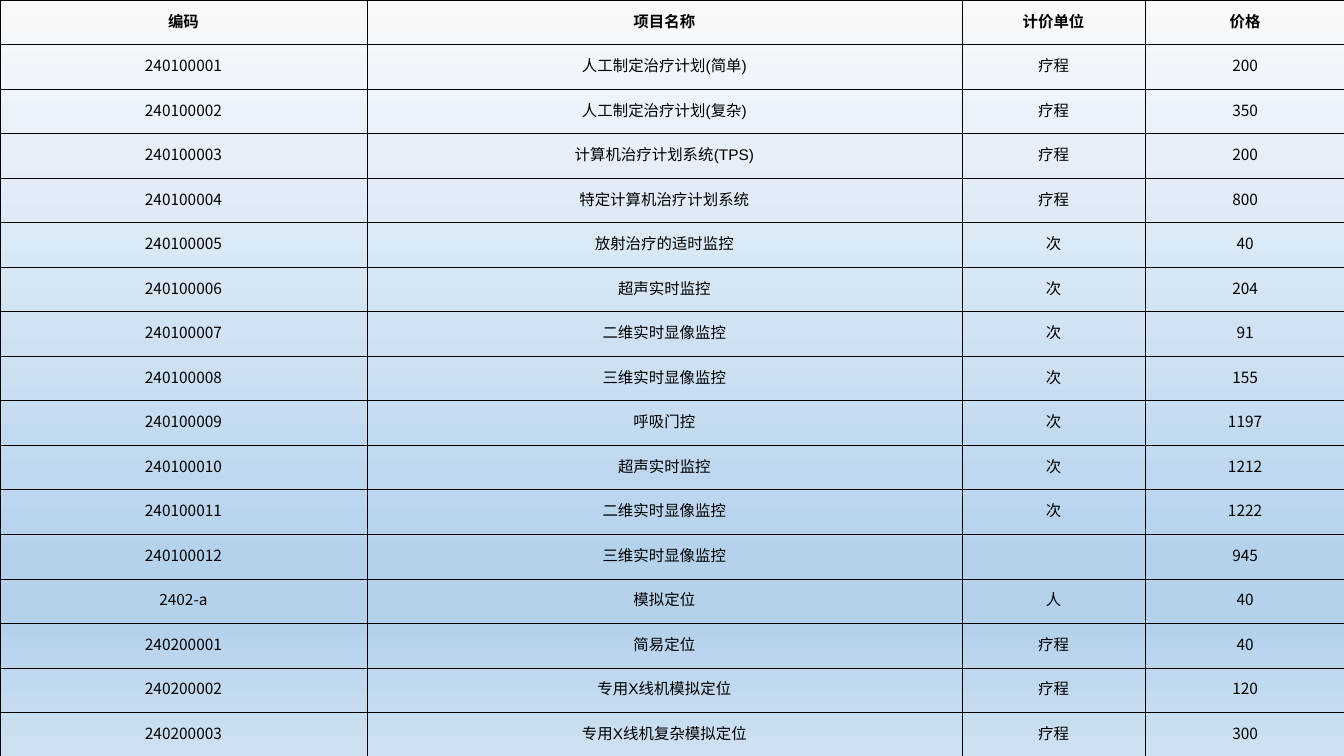
from typing import NamedTuple

from lxml import etree
from pptx import Presentation
from pptx.dml.color import RGBColor
from pptx.enum.text import MSO_ANCHOR, PP_ALIGN
from pptx.oxml.ns import qn
from pptx.util import Inches, Pt

CENTER = PP_ALIGN.CENTER
MIDDLE = MSO_ANCHOR.MIDDLE

COLORS = {"ink": "000000", "top": "F7FAFD", "middle": "B5D2EC", "bottom": "CEE1F2"}
BACKGROUND_STOPS = ((0, "top"), (74, "middle"), (83, "middle"), (100, "bottom"))
LATIN_FONT = "Arial"
CHINESE_FONT = "Noto Sans CJK SC"
FONT_SIZE = Pt(11)
BORDER_WIDTH = Pt(0.5)
COLUMN_WIDTHS = (3.64, 5.9, 1.82, 1.98)
TABLE_HEIGHT = 7.51


class PriceItem(NamedTuple):
    code: str
    name: str
    unit: str
    price: str


HEADER = PriceItem("编码", "项目名称", "计价单位", "价格")
ITEMS = (
    PriceItem("240100001", "人工制定治疗计划(简单)", "疗程", "200"),
    PriceItem("240100002", "人工制定治疗计划(复杂)", "疗程", "350"),
    PriceItem("240100003", "计算机治疗计划系统(TPS)", "疗程", "200"),
    PriceItem("240100004", "特定计算机治疗计划系统", "疗程", "800"),
    PriceItem("240100005", "放射治疗的适时监控", "次", "40"),
    PriceItem("240100006", "超声实时监控", "次", "204"),
    PriceItem("240100007", "二维实时显像监控", "次", "91"),
    PriceItem("240100008", "三维实时显像监控", "次", "155"),
    PriceItem("240100009", "呼吸门控", "次", "1197"),
    PriceItem("240100010", "超声实时监控", "次", "1212"),
    PriceItem("240100011", "二维实时显像监控", "次", "1222"),
    PriceItem("240100012", "三维实时显像监控", "", "945"),
    PriceItem("2402-a", "模拟定位", "人", "40"),
    PriceItem("240200001", "简易定位", "疗程", "40"),
    PriceItem("240200002", "专用X线机模拟定位", "疗程", "120"),
    PriceItem("240200003", "专用X线机复杂模拟定位", "疗程", "300"),
)


def paint_background(slide) -> None:
    fill = slide.background.fill
    fill.gradient()
    fill.gradient_angle = 270
    stop_list = next(slide.element.iter(qn("a:gsLst")))
    for stop in list(stop_list):
        stop_list.remove(stop)
    for percent, color in BACKGROUND_STOPS:
        stop = etree.SubElement(stop_list, qn("a:gs"), pos=str(percent * 1000))
        etree.SubElement(stop, qn("a:srgbClr"), val=COLORS[color])


def add_borders(cell) -> None:
    properties = cell._tc.get_or_add_tcPr()
    for index, side in enumerate(("lnL", "lnR", "lnT", "lnB")):
        line = etree.Element(qn(f"a:{side}"), w=str(BORDER_WIDTH))
        fill = etree.SubElement(line, qn("a:solidFill"))
        etree.SubElement(fill, qn("a:srgbClr"), val=COLORS["ink"])
        properties.insert(index, line)


def fill_cell(cell, text: str, latin_font: str, bold: bool) -> None:
    cell.text = text
    cell.fill.background()
    cell.vertical_anchor = MIDDLE
    cell.margin_left = cell.margin_right = cell.margin_top = Inches(0.01)
    cell.margin_bottom = Inches(0.05)
    add_borders(cell)
    paragraph = cell.text_frame.paragraphs[0]
    paragraph.alignment = CENTER
    font = paragraph.font
    font.name = latin_font
    font.size = FONT_SIZE
    font.bold = bold
    font.color.rgb = RGBColor.from_string(COLORS["ink"])
    latin = next(paragraph._p.iter(qn("a:latin")))
    latin.addnext(etree.Element(qn("a:ea"), typeface=CHINESE_FONT))


def add_price_table(slide) -> None:
    rows = (HEADER, *ITEMS)
    table = slide.shapes.add_table(
        len(rows), len(COLUMN_WIDTHS), Inches(0), Inches(0),
        Inches(sum(COLUMN_WIDTHS)), Inches(TABLE_HEIGHT),
    ).table
    table.horz_banding = False
    table.first_row = False
    for column, width in zip(table.columns, COLUMN_WIDTHS):
        column.width = Inches(width)
    for row, item in zip(table.rows, rows):
        row.height = Inches(TABLE_HEIGHT / len(rows))
        is_header = item is HEADER
        for cell, field, text in zip(row.cells, item._fields, item):
            is_number = field in ("code", "price") and not is_header
            fill_cell(cell, text, CHINESE_FONT if is_number else LATIN_FONT, is_header)


def main() -> None:
    presentation = Presentation()
    presentation.slide_width = Inches(13.33)
    presentation.slide_height = Inches(7.5)
    slide = presentation.slides.add_slide(presentation.slide_layouts[6])
    paint_background(slide)
    add_price_table(slide)
    presentation.save("out.pptx")


if __name__ == "__main__":
    main()
